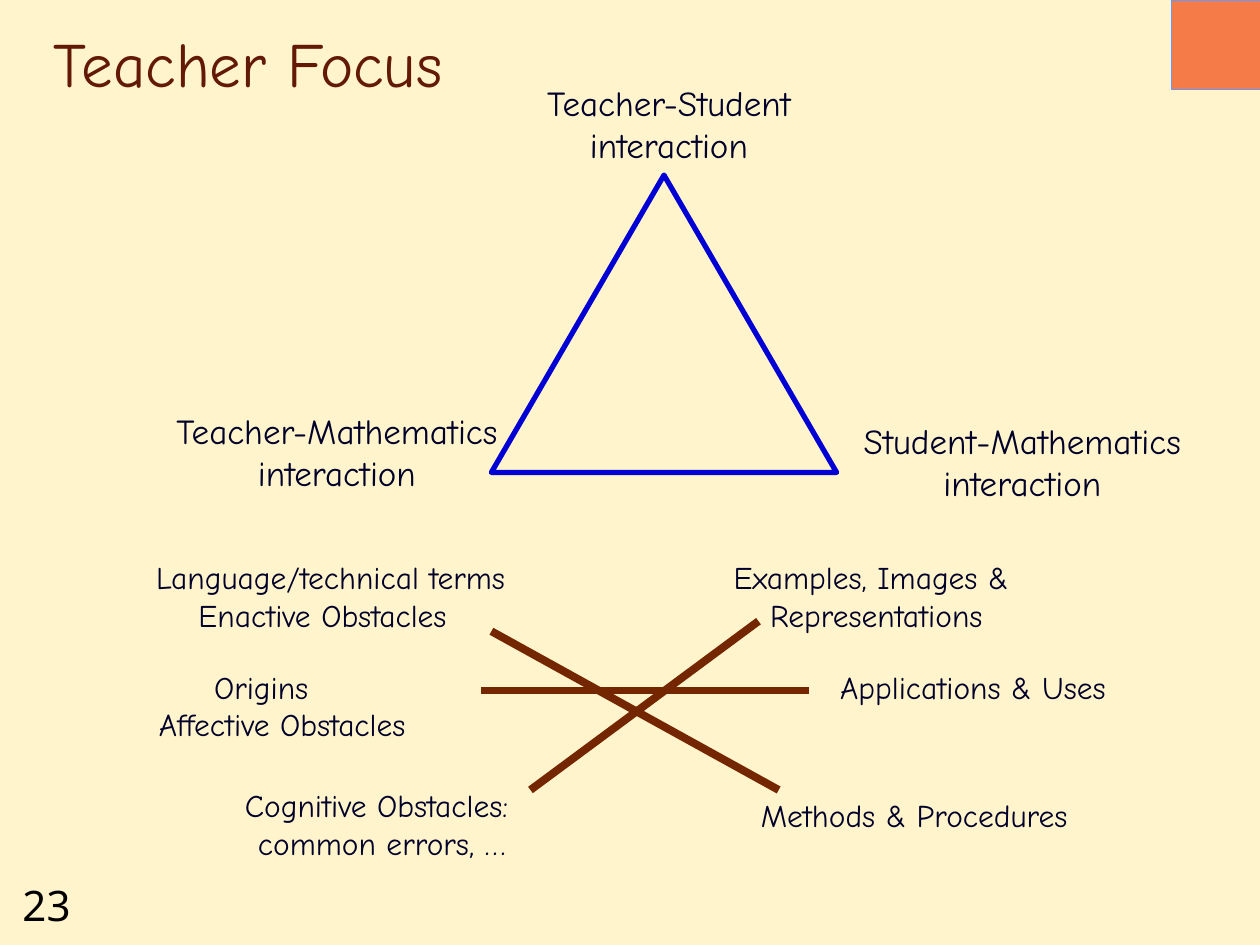
from dataclasses import dataclass

import lxml.etree
import pptx
import pptx.dml.color
import pptx.enum.shapes
import pptx.enum.text
import pptx.oxml.ns
import pptx.util

COLUMNS, ROWS = 100, 75
WIDTH, HEIGHT = pptx.util.Inches(10), pptx.util.Inches(7.5)
INK, MAROON, BLUE, BROWN = "00002A", "631908", "0000D5", "732600"
HANDWRITING = "Comic Neue"
CENTER = pptx.enum.text.PP_ALIGN.CENTER
LEFT = pptx.enum.text.PP_ALIGN.LEFT
SHAPES = pptx.enum.shapes.MSO_SHAPE


@dataclass(frozen=True)
class Box:
    column: float
    row: float
    columns: float
    rows: float

    def emu(self) -> tuple[int, int, int, int]:
        return across(self.column), down(self.row), across(self.columns), down(self.rows)


@dataclass(frozen=True)
class Label:
    text: str
    box: Box
    size: float = 18
    align: pptx.enum.text.PP_ALIGN = CENTER
    wrap: bool = True


@dataclass(frozen=True)
class Link:
    start: tuple[float, float]
    end: tuple[float, float]


INTERACTIONS = [
    Label("Teacher-Student interaction", Box(41.3, 6, 23.6, 7.7), size=20),
    Label("Student-Mathematics interaction", Box(65, 32.8, 32.3, 7.7), size=20),
    Label("Teacher-Mathematics interaction", Box(10.6, 32, 32.3, 7.7), size=20),
]
ASPECTS = [
    Label("Cognitive Obstacles: \ncommon errors, …", Box(17.7, 61.9, 25.2, 7.1)),
    Label("Applications & Uses", Box(65.7, 52.5, 24.3, 4), align=LEFT, wrap=False),
    Label("Methods & Procedures", Box(59.4, 62.7, 28, 4), align=LEFT, wrap=False),
    Label("Language/technical terms", Box(11.4, 43.8, 31.5, 4), align=LEFT, wrap=False),
    Label("Origins", Box(16, 52.5, 10.2, 4), align=LEFT, wrap=False),
    Label("Examples, Images & \nRepresentations", Box(57.1, 43.8, 24.9, 7.1), wrap=False),
    Label("Enactive Obstacles", Box(13, 46.8, 25.2, 4)),
    Label("Affective Obstacles", Box(9.8, 55.5, 25.2, 4)),
]
LINKS = [
    Link((39, 50.1), (61.8, 62.7)),
    Link((42.1, 62.7), (60.2, 49.3)),
    Link((38.2, 54.8), (64.2, 54.8)),
]


def across(columns: float) -> int:
    return round(WIDTH * columns / COLUMNS)


def down(rows: float) -> int:
    return round(HEIGHT * rows / ROWS)


def color(value: str) -> pptx.dml.color.RGBColor:
    return pptx.dml.color.RGBColor.from_string(value)


def add_text(slide, text: str, box: Box, *, size: float = 18, font: str = HANDWRITING,
             ink: str = INK, align=LEFT, wrap: bool = True, grow: bool = True,
             anchor=pptx.enum.text.MSO_ANCHOR.TOP) -> None:
    frame = slide.shapes.add_textbox(*box.emu()).text_frame
    frame.word_wrap = wrap
    frame.vertical_anchor = anchor
    fit = pptx.enum.text.MSO_AUTO_SIZE
    frame.auto_size = fit.SHAPE_TO_FIT_TEXT if grow else fit.NONE
    frame.text = text
    for paragraph in frame.paragraphs:
        paragraph.alignment = align
        for run in paragraph.runs:
            run.font.name = font
            run.font.size = pptx.util.Pt(size)
            run.font.color.rgb = color(ink)


def add_label(slide, label: Label) -> None:
    add_text(slide, label.text, label.box, size=label.size,
             align=label.align, wrap=label.wrap)


def add_outlined(slide, kind, box: Box, line: str, weight: float,
                 fill: str | None = None) -> None:
    shape = slide.shapes.add_shape(kind, *box.emu())
    shape.shadow.inherit = False
    if fill:
        shape.fill.solid()
        shape.fill.fore_color.rgb = color(fill)
    else:
        shape.fill.background()
    shape.line.color.rgb = color(line)
    shape.line.width = pptx.util.Pt(weight)


def add_link(slide, link: Link) -> None:
    (x1, y1), (x2, y2) = link.start, link.end
    connector = slide.shapes.add_connector(
        pptx.enum.shapes.MSO_CONNECTOR.STRAIGHT, across(x1), down(y1), across(x2), down(y2))
    connector.line.color.rgb = color(BROWN)
    connector.line.width = pptx.util.Pt(4.5)
    lxml.etree.SubElement(connector._element.spPr, pptx.oxml.ns.qn("a:effectLst"))


def paint_background(slide, value: str, opacity: int) -> None:
    fill = slide.background.fill
    fill.solid()
    fill.fore_color.rgb = color(value)
    tint = next(slide._element.iter(pptx.oxml.ns.qn("a:srgbClr")))
    alpha = lxml.etree.SubElement(tint, pptx.oxml.ns.qn("a:alpha"))
    alpha.set("val", str(opacity * 1000))


def main() -> None:
    deck = pptx.Presentation()
    deck.slide_width, deck.slide_height = WIDTH, HEIGHT
    slide = deck.slides.add_slide(deck.slide_layouts[6])
    paint_background(slide, "FFF2C0", 82)
    add_text(slide, "23", Box(0.8, 69.3, 7.5, 5), size=24, font="Noto Sans", ink="000000")
    add_text(slide, "Teacher Focus", Box(3.3, 1.7, 85, 6.7), size=36, ink=MAROON,
             grow=False, anchor=pptx.enum.text.MSO_ANCHOR.BOTTOM)
    add_outlined(slide, SHAPES.ISOSCELES_TRIANGLE, Box(39, 13.9, 27.4, 23.6), BLUE, 3)
    for label in INTERACTIONS + ASPECTS:
        add_label(slide, label)
    for link in LINKS:
        add_link(slide, link)
    add_outlined(slide, SHAPES.ACTION_BUTTON_CUSTOM, Box(93, 0, 7.1, 7.1),
                 "6699FF", 0.75, fill="F57B49")
    deck.save("out.pptx")


if __name__ == "__main__":
    main()
